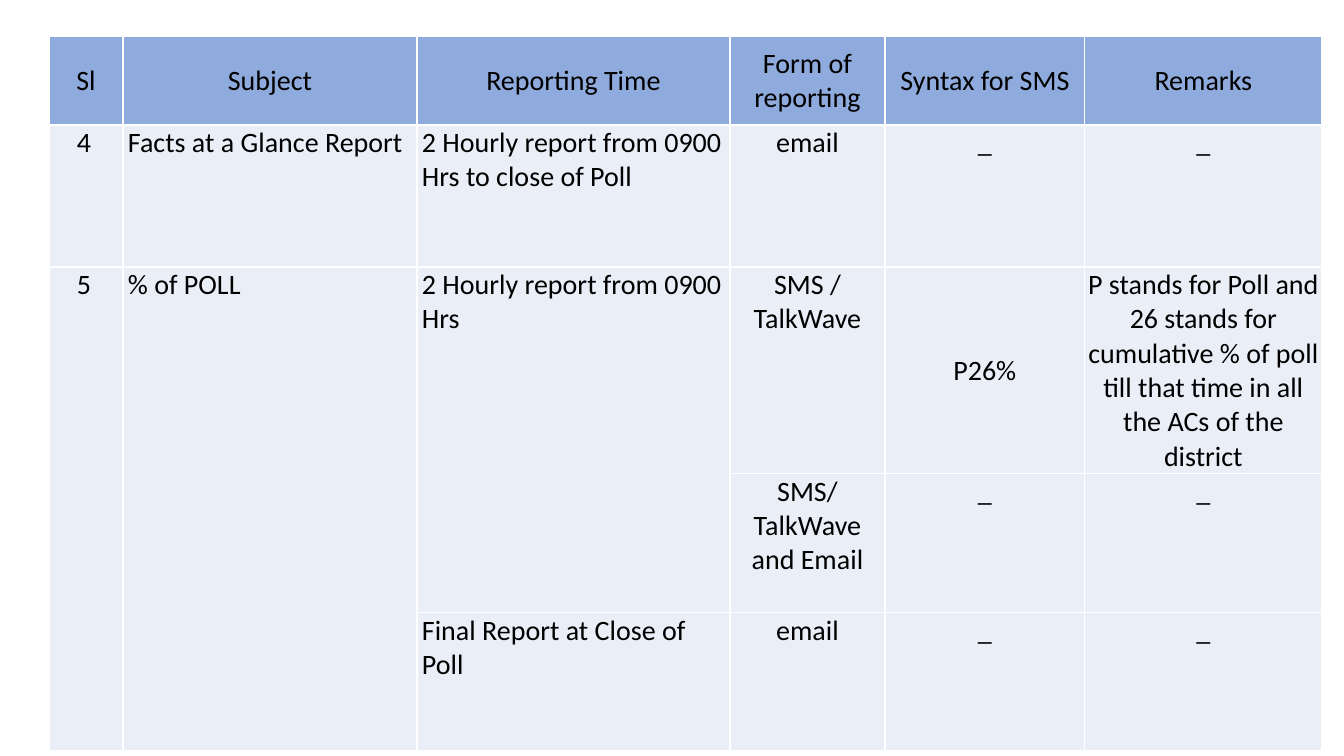
"""Build a slide with the poll-day reporting schedule table."""
from lxml import etree
from pptx import Presentation
from pptx import util as u
from pptx.dml import color
from pptx.enum import text
from pptx.oxml import ns

PX = 914400 / 100.8
WIDTHS = [74, 294, 313, 155, 200, 237]
HEIGHTS = [89, 142, 203, 139, 138]
ROWS = [
    ["Sl", "Subject", "Reporting Time", "Form of reporting", "Syntax for SMS", "Remarks"],
    ["4", "Facts at a Glance Report", "2 Hourly report from 0900 Hrs to close of Poll",
     "email", "_", "_"],
    ["5", "% of POLL", "2 Hourly report from 0900 Hrs", "SMS / TalkWave", "P26%",
     "P stands for Poll and 26 stands for cumulative % of poll till that time "
     "in all the ACs of the district"],
    ["", "", "", "SMS/ TalkWave and Email", "_", "_"],
    ["", "", "Final Report at Close of Poll", "email", "_", "_"],
]
MERGES = [((2, 0), (4, 0)), ((2, 1), (4, 1)), ((2, 2), (3, 2))]
MIDDLE_CELLS = {(2, 4), (2, 5)}
LEFT_COLUMNS = {1, 2}


def emu(px):
    """Turn pixels into EMU."""
    return u.Emu(round(px * PX))


def rgb(value):
    """Turn a hex string into a colour."""
    return color.RGBColor.from_string(value)


def add_borders(cell, value):
    """Draw a one-point line on every side of a cell."""
    properties = cell._tc.get_or_add_tcPr()
    for side in ("lnL", "lnR", "lnT", "lnB"):
        line = etree.SubElement(properties, ns.qn(f"a:{side}"), w=str(u.Pt(1)))
        fill = etree.SubElement(line, ns.qn("a:solidFill"))
        etree.SubElement(fill, ns.qn("a:srgbClr"), val=value)


def format_cell(cell, row, column):
    """Set the insets, anchor, borders and fill of a cell."""
    header = row == 0
    cell.margin_left = emu(5 if column in LEFT_COLUMNS and not header else 1)
    cell.margin_right = emu(5 if column == 0 and not header else 1)
    cell.margin_top, cell.margin_bottom = emu(1), 0
    middle = header or (row, column) in MIDDLE_CELLS
    cell.vertical_anchor = text.MSO_ANCHOR.MIDDLE if middle else text.MSO_ANCHOR.TOP
    add_borders(cell, "FFFFFF")
    cell.fill.solid()
    cell.fill.fore_color.rgb = rgb("8FAADC" if header else "EAEFF7")


def write_cell(cell, words, centred):
    """Write the words of a cell in its font."""
    cell.text = words
    para = cell.text_frame.paragraphs[0]
    para.alignment = text.PP_ALIGN.CENTER if centred else text.PP_ALIGN.LEFT
    para.font.name, para.font.size = "Calibri", u.Pt(20)
    para.font.color.rgb = rgb("000000")


def add_schedule(page, left, top):
    """Add the reporting schedule table."""
    frame = page.shapes.add_table(len(HEIGHTS), len(WIDTHS), emu(left), emu(top),
                                  emu(sum(WIDTHS)), emu(sum(HEIGHTS)))
    schedule = frame.table
    schedule.first_row = schedule.horz_banding = False
    for column, width in zip(schedule.columns, WIDTHS):
        column.width = emu(width)
    for row, height in zip(schedule.rows, HEIGHTS):
        row.height = emu(height)
    for row, entries in enumerate(ROWS):
        for column, words in enumerate(entries):
            cell = schedule.cell(row, column)
            format_cell(cell, row, column)
            write_cell(cell, words, row == 0 or column not in LEFT_COLUMNS)
    for first, last in MERGES:
        schedule.cell(*first).merge(schedule.cell(*last))


def main():
    """Build and save the deck."""
    deck = Presentation()
    deck.slide_width, deck.slide_height = emu(1344), emu(756)
    page = deck.slides.add_slide(deck.slide_layouts[6])
    add_schedule(page, 49, 36)
    deck.save("out.pptx")


if __name__ == "__main__":
    main()
